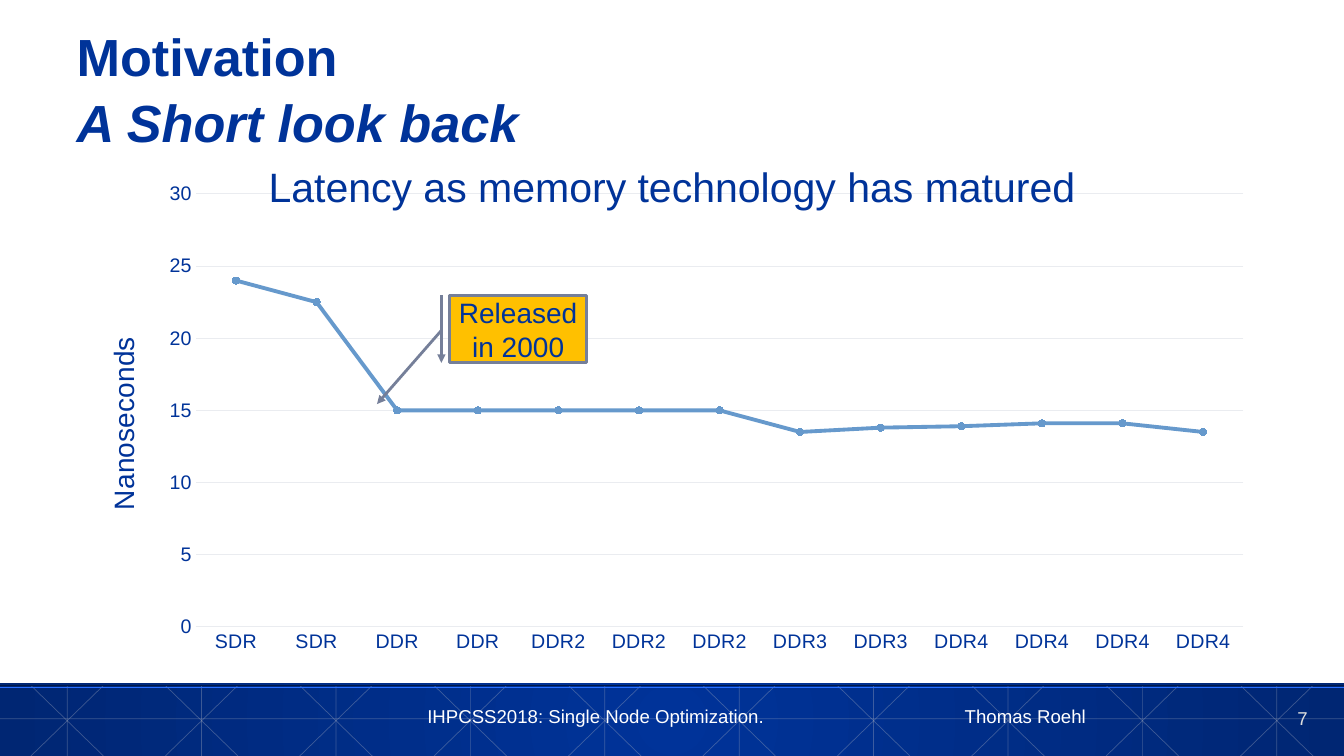
"""Builds a slide with a line chart of memory latency over a dark footer band."""
import pptx
import pptx.util
import pptx.chart.data
import pptx.dml.color
import pptx.enum.chart
import pptx.enum.shapes
import pptx.enum.text
import pptx.oxml
import pptx.oxml.ns

Inches, Pt = pptx.util.Inches, pptx.util.Pt
Align, Anchor = pptx.enum.text.PP_ALIGN, pptx.enum.text.MSO_ANCHOR
Preset = pptx.enum.shapes.MSO_SHAPE
qn = pptx.oxml.ns.qn

WIDTH, HEIGHT = 13.33, 7.5
NAVY, DARK, BLUE, GRID = "003399", "002673", "6699CC", "EAECF0"
FONT = "Arial"
BAND = 6.78
TITLE = [("Motivation\v", False), ("A Short look back", True)]
HEAD = "Latency as memory technology has matured"
FOOT = "IHPCSS2018: Single Node Optimization.\tThomas Roehl"
NOTE = "Released in 2000"
POINTS = [
    ("SDR", 24), ("SDR", 22.5), ("DDR", 15), ("DDR", 15), ("DDR2", 15),
    ("DDR2", 15), ("DDR2", 15), ("DDR3", 13.5), ("DDR3", 13.8),
    ("DDR4", 13.9), ("DDR4", 14.1), ("DDR4", 14.1), ("DDR4", 13.5),
]

deck = pptx.Presentation()
deck.slide_width, deck.slide_height = Inches(WIDTH), Inches(HEIGHT)
slide = deck.slides.add_slide(deck.slide_layouts[6])
shapes = slide.shapes


def color(code):
    return pptx.dml.color.RGBColor.from_string(code)


def node(tag, **attrs):
    part = pptx.oxml.parse_xml(f"<{tag} {pptx.oxml.ns.nsdecls(tag[0])}/>")
    for name, value in attrs.items():
        part.set(name, str(value))
    return part


def style(font, size, code=NAVY, **marks):
    font.name, font.size = FONT, Pt(size)
    font.color.rgb = color(code)
    for name, value in marks.items():
        setattr(font, name, value)


def write(text, box=None, shape=None, size=20, code=NAVY, align=Align.LEFT,
          anchor=Anchor.TOP, inset=(0, 0), bold=False, wrap=True, space=None, tab=None):
    if shape is None:
        shape = shapes.add_textbox(*map(Inches, box))
    frame = shape.text_frame
    frame.word_wrap, frame.vertical_anchor = wrap, anchor
    frame.margin_left = frame.margin_right = Inches(inset[0])
    frame.margin_top = frame.margin_bottom = Inches(inset[1])
    para = frame.paragraphs[0]
    para.alignment = align
    if space:
        para.line_spacing = space
    if tab:
        tabs = node("a:tabLst")
        tabs.append(node("a:tab", pos=Inches(tab), algn="l"))
        para._p.get_or_add_pPr().append(tabs)
    for words, slant in [(text, False)] if isinstance(text, str) else text:
        run = para.add_run()
        run.text = words.rstrip("\v")
        style(run.font, size, code, bold=bold, italic=slant)
        if words.endswith("\v"):
            para.add_line_break()


def rule(start, end, code="ACB2C2", width=0.5, alpha=None):
    kind = pptx.enum.shapes.MSO_CONNECTOR.STRAIGHT
    line = shapes.add_connector(kind, *map(Inches, start + end))
    line.line.color.rgb, line.line.width = color(code), Pt(width)
    if alpha:
        tint = line._element.spPr.find(".//" + qn("a:srgbClr"))
        tint.append(node("a:alpha", val=alpha * 1000))
    line._element.spPr.append(node("a:effectLst"))


def place(owner, **spots):
    layout = owner.find(qn("c:layout"))
    if layout is None:
        layout = node("c:layout")
        ahead = owner.find(qn("c:tx"))
        if ahead is None:
            owner.insert(0, layout)
        else:
            ahead.addnext(layout)
    manual = node("c:manualLayout")
    if "w" in spots:
        manual.append(node("c:layoutTarget", val="inner"))
    for name in "xy":
        manual.append(node(f"c:{name}Mode", val="edge"))
    for name, value in spots.items():
        manual.append(node(f"c:{name}", val=value))
    layout.append(manual)


def draw_band():
    band = shapes.add_shape(Preset.RECTANGLE, 0, Inches(BAND), Inches(WIDTH), Inches(HEIGHT - BAND))
    band.shadow.inherit = False
    band.line.fill.background()
    band.fill.gradient()
    for stop, code in zip(band.fill.gradient_stops, (NAVY, DARK)):
        stop.color.rgb = color(code)
    lin = band._element.spPr.find(".//" + qn("a:lin"))
    glow = node("a:path", path="circle")
    glow.append(node("a:fillToRect", l=50000, t=50000, r=50000, b=50000))
    lin.getparent().replace(lin, glow)

    top, half = BAND + 0.02, 0.36
    for step in range(10):
        mid = (step + 0.5) * WIDTH / 10
        for low, high in ((mid, mid), (mid - half, mid + half), (mid + half, mid - half)):
            rule((low, top), (high, HEIGHT), alpha=35)
    rule((0, 7.13), (WIDTH, 7.13), alpha=35)
    rule((0, top), (WIDTH, top), "00194C", 1.25)
    rule((0, top + 0.02), (WIDTH, top + 0.02), "2970FF", 1)


def draw_chart():
    data = pptx.chart.data.CategoryChartData()
    data.categories = [name for name, _ in POINTS]
    data.add_series("Series 1", [value for _, value in POINTS])
    kind = pptx.enum.chart.XL_CHART_TYPE.LINE_MARKERS
    box = map(Inches, (0.76, 1.73, 11.81, 4.88))
    chart = shapes.add_chart(kind, *box, data).chart
    chart.has_legend = chart.has_title = False
    style(chart.font, 10)
    chart.plots[0].vary_by_categories = False
    place(chart._chartSpace.chart.plotArea, x=0.1, y=0.04, w=0.88, h=0.88)

    line = chart.plots[0].series[0]
    line.smooth = False
    line.format.line.color.rgb, line.format.line.width = color(BLUE), Pt(2.75)
    line.marker.style, line.marker.size = pptx.enum.chart.XL_MARKER_STYLE.CIRCLE, 5
    line.marker.format.fill.solid()
    line.marker.format.fill.fore_color.rgb = color(BLUE)
    line.marker.format.line.color.rgb = color(NAVY)

    names, scale = chart.category_axis, chart.value_axis
    for axis in (names, scale):
        axis.major_tick_mark = axis.minor_tick_mark = pptx.enum.chart.XL_TICK_MARK.NONE
        style(axis.tick_labels.font, 14)
    scale.minimum_scale, scale.maximum_scale, scale.major_unit = 0, 30, 5
    scale.format.line.fill.background()
    for edge in (names.format.line, scale.major_gridlines.format.line):
        edge.color.rgb, edge.width = color(GRID), Pt(0.75)
    label = scale.axis_title
    label.text_frame.text = "Nanoseconds"
    style(label.text_frame.paragraphs[0].runs[0].font, 20, bold=False)
    place(label._element, x=0.02, y=0.32)


def draw_note():
    note = shapes.add_shape(Preset.LINE_CALLOUT_1_BORDER_AND_ACCENT_BAR,
                            *map(Inches, (4.46, 2.93, 1.36, 0.67)))
    note.shadow.inherit = False
    for place_no, value in enumerate((0.52, -0.06, 1.61, -0.53)):
        note.adjustments[place_no] = value
    note.fill.solid()
    note.fill.fore_color.rgb = color("FFC000")
    note.line.color.rgb, note.line.width = color("757F99"), Pt(2)
    note.line._get_or_add_ln().append(node("a:tailEnd", type="triangle"))
    write(NOTE, shape=note, align=Align.CENTER, anchor=Anchor.BOTTOM)


draw_band()
write("7", (12.6, 7.01, 0.37, 0.22), size=13.3, code="DDDEDD", align=Align.RIGHT,
      anchor=Anchor.BOTTOM, wrap=False)
draw_chart()
write(TITLE, (0.76, 0.21, 11.81, 1.31), size=37.3, bold=True, anchor=Anchor.MIDDLE, space=1.05)
draw_note()
write(HEAD, (0, 1.55, WIDTH, 0.59), size=29.3, align=Align.CENTER, inset=(0.1, 0.05))
write(FOOT, (4.14, 6.94, 8.14, 0.36), size=13.3, code="FFFFFF", inset=(0.1, 0.05), tab=5.33)
deck.save("out.pptx")
